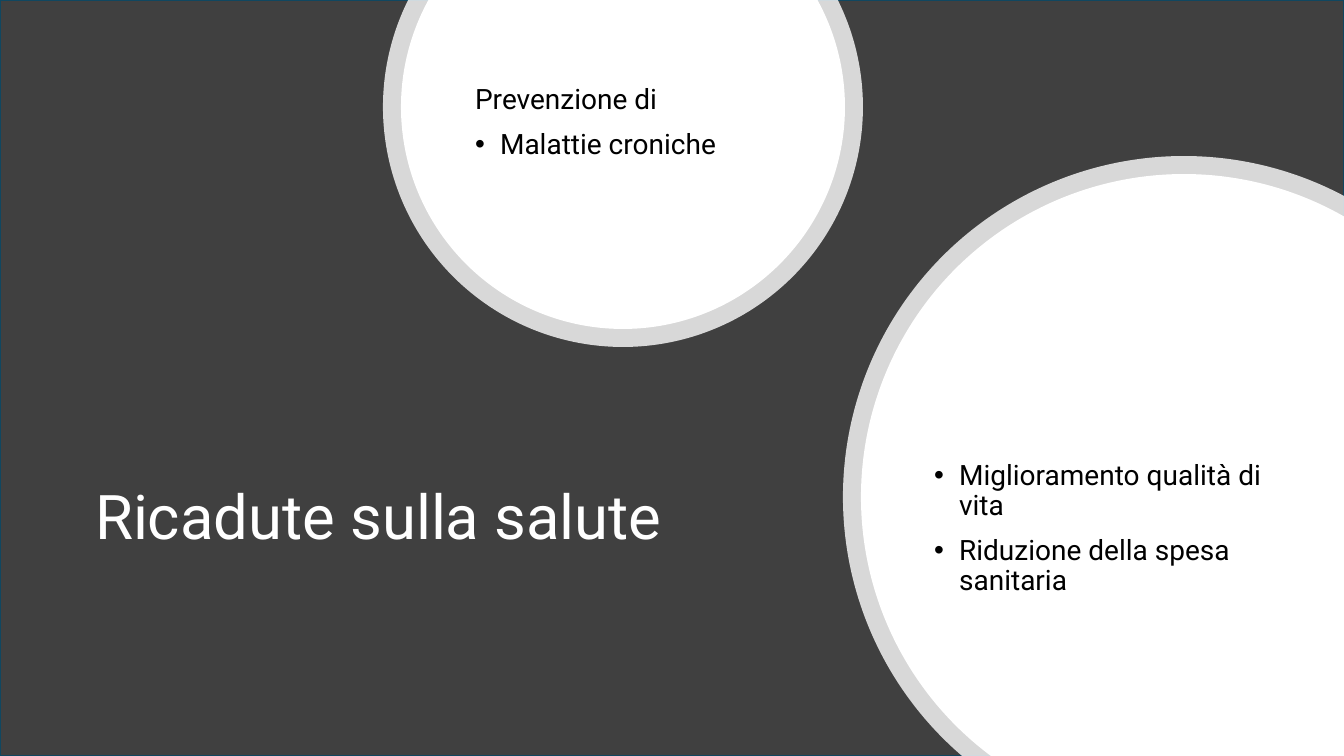
import math
from dataclasses import dataclass

from lxml import etree
from pptx import Presentation
from pptx.dml.color import RGBColor
from pptx.enum import shapes, text
from pptx.oxml import ns
from pptx.util import Pt

WIDTH, HEIGHT = 1344, 756
TITLE = ("Ricadute sulla salute", (85, 386, 667, 267))
# Each list: box in px, then (text, bulleted) lines
LISTS = [
    ((465, 39, 317, 168), [("Prevenzione di", False), ("Malattie croniche", True)]),
    ((924, 405, 383, 248), [("Miglioramento qualità di vita", True),
                            ("Riduzione della spesa sanitaria", True)]),
]
TOP_CIRCLE = (623, 107, 240)  # centre x, centre y, outer radius in px
RIGHT_CIRCLE = (1184, 497, 341)
RING = 18
RING_ALPHA = 80
BULLET_INDENT = 25


@dataclass(frozen=True)
class Theme:
    font: str = "Roboto"
    title_size: int = 44
    body_size: int = 20
    ground: RGBColor = RGBColor(0x40, 0x40, 0x40)
    border: RGBColor = RGBColor(0x10, 0x47, 0x60)
    white: RGBColor = RGBColor(0xFF, 0xFF, 0xFF)
    black: RGBColor = RGBColor(0, 0, 0)


THEME = Theme()


def px(n):
    return round(n * 914400 / 100.8)


def place(sp, box):
    sp.left, sp.top, sp.width, sp.height = map(px, box)
    sp.element.getparent().append(sp.element)  # in front of the circles
    tf = sp.text_frame
    tf.word_wrap = True
    tf.auto_size = text.MSO_AUTO_SIZE.NONE
    tf.vertical_anchor = text.MSO_ANCHOR.MIDDLE
    return tf


def write(p, words, size, color):
    p.alignment = text.PP_ALIGN.LEFT
    p.line_spacing = 0.9
    r = p.add_run()
    r.text = words
    r.font.name, r.font.size = THEME.font, Pt(size)
    r.font.color.rgb = color


def set_bullet(p, bulleted):
    pPr = p._p.get_or_add_pPr()
    indent = px(BULLET_INDENT) if bulleted else 0
    pPr.set("marL", str(indent))
    pPr.set("indent", str(-indent))
    if bulleted:
        font = etree.SubElement(pPr, ns.qn("a:buFont"))
        font.set("typeface", "Arial")
        etree.SubElement(pPr, ns.qn("a:buChar")).set("char", "•")
    else:
        etree.SubElement(pPr, ns.qn("a:buNone"))


def top_angles(cy, radius):
    """Clockwise degrees from the right crossing of the top edge to the left one."""
    cut = math.degrees(math.asin(cy / radius))
    return [-cut, 0, 90, 180, 180 + cut]


def right_angles(cx, cy, radius):
    """Clockwise degrees from the crossing of the bottom edge to the right edge."""
    bottom = math.degrees(math.asin((HEIGHT - cy) / radius))
    right = math.degrees(math.acos((WIDTH - cx) / radius))
    return [180 - bottom, 180, 270, 360 - right]


def add_disc(s, cx, cy, radius, angles, corners, alpha):
    """Draw a white disc as arcs between the angles, closed along the slide edge."""
    points = [(px(cx + radius * math.cos(math.radians(a))),
               px(cy + radius * math.sin(math.radians(a)))) for a in angles]
    points += [(px(x), px(y)) for x, y in corners]
    builder = s.shapes.build_freeform(*points[0])
    builder.add_line_segments(points[1:], close=True)
    sp = builder.convert_to_shape()
    sp.shadow.inherit = False
    sp.line.fill.background()
    sp.fill.solid()
    sp.fill.fore_color.rgb = THEME.white
    spPr = sp.element.spPr
    color = spPr.find(ns.qn("a:solidFill"))[0]
    etree.SubElement(color, ns.qn("a:alpha")).set("val", str(alpha * 1000))

    segments = list(spPr.iter(ns.qn("a:lnTo")))
    for segment, start, end in zip(segments, angles, angles[1:]):
        arc = etree.Element(ns.qn("a:arcTo"))
        arc.set("wR", str(px(radius)))
        arc.set("hR", str(px(radius)))
        arc.set("stAng", str(round(start % 360 * 60000)))
        arc.set("swAng", str(round((end - start) * 60000)))
        segment.getparent().replace(segment, arc)


def main():
    prs = Presentation()
    prs.slide_width, prs.slide_height = px(WIDTH), px(HEIGHT)
    s = prs.slides.add_slide(prs.slide_layouts.get_by_name("Two Content"))

    ground = s.shapes.add_shape(shapes.MSO_SHAPE.RECTANGLE, 0, 0, px(WIDTH), px(HEIGHT))
    ground.shadow.inherit = False
    ground.fill.solid()
    ground.fill.fore_color.rgb = THEME.ground
    ground.line.color.rgb = THEME.border
    ground.line.width = Pt(1.5)

    for inset, alpha in [(0, RING_ALPHA), (RING, 100)]:
        cx, cy, radius = TOP_CIRCLE
        radius -= inset
        add_disc(s, cx, cy, radius, top_angles(cy, radius), [], alpha)
        cx, cy, radius = RIGHT_CIRCLE
        radius -= inset
        add_disc(s, cx, cy, radius, right_angles(cx, cy, radius), [(WIDTH, HEIGHT)], alpha)

    words, box = TITLE
    tf = place(s.shapes.title, box)
    write(tf.paragraphs[0], words, THEME.title_size, THEME.white)

    for idx, (box, lines) in enumerate(LISTS, 1):
        tf = place(s.placeholders[idx], box)
        for i, (words, bulleted) in enumerate(lines):
            p = tf.add_paragraph() if i else tf.paragraphs[0]
            set_bullet(p, bulleted)
            p.space_before = Pt(10 if i else 0)
            write(p, words, THEME.body_size, THEME.black)

    prs.save("out.pptx")


if __name__ == "__main__":
    main()
